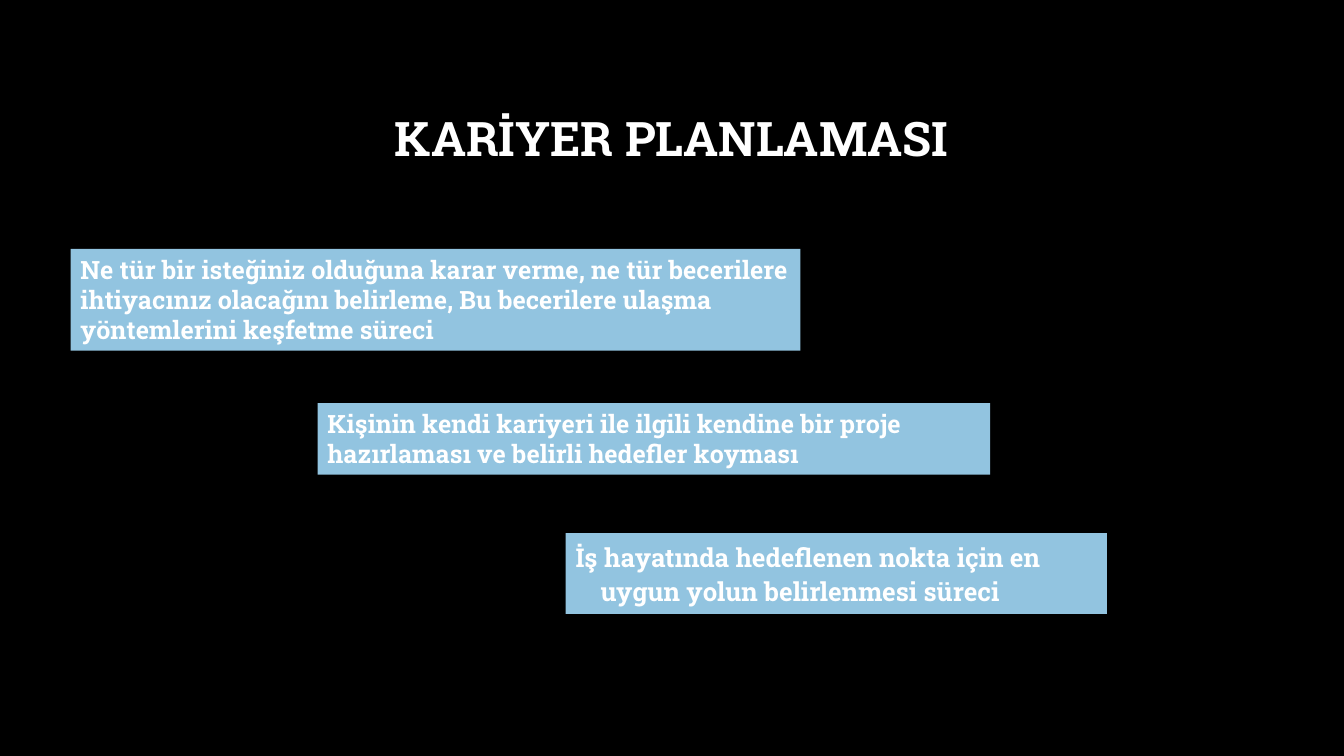
import pptx
import pptx.util
import pptx.dml.color
import pptx.enum.shapes
import pptx.enum.text

RGBColor = pptx.dml.color.RGBColor
Inches = pptx.util.Inches
ALIGN = pptx.enum.text.PP_ALIGN
ANCHOR = pptx.enum.text.MSO_ANCHOR

BLACK = RGBColor(0x00, 0x00, 0x00)
WHITE = RGBColor(0xFF, 0xFF, 0xFF)
SKY = RGBColor(0x92, 0xC4, 0xE0)
FONT = "Roboto Slab"

TITLE_BOX = (1, 0.67, 11.32, 1.45)
STEPS = [
    ((0.7, 2.47, 7.24, 1.01),
     "Ne tür bir isteğiniz olduğuna karar verme, ne tür becerilere ihtiyacınız "
     "olacağını belirleme, Bu becerilere ulaşma yöntemlerini keşfetme süreci",
     {}),
    ((3.15, 4, 6.67, 0.71),
     "Kişinin kendi kariyeri ile ilgili kendine bir proje hazırlaması ve "
     "belirli hedefler koyması",
     {}),
    ((5.61, 5.29, 5.37, 0.8),
     "İş hayatında hedeflenen nokta için en uygun yolun belirlenmesi süreci",
     {"size": 18.5, "spacing": 1.1, "hanging": 0.25}),
]


def write(sp, text, size=18, align=ALIGN.LEFT, anchor=ANCHOR.TOP, spacing=1.0, hanging=0):
    tf = sp.text_frame
    tf.word_wrap = True
    tf.vertical_anchor = anchor
    p = tf.paragraphs[0]
    p.alignment = align
    p.line_spacing = spacing
    if hanging:
        pPr = p._p.get_or_add_pPr()
        pPr.set("marL", str(Inches(hanging)))
        pPr.set("indent", str(-Inches(hanging)))
    r = p.add_run()
    r.text = text
    r.font.name = FONT
    r.font.size = pptx.util.Pt(size)
    r.font.bold = True
    r.font.color.rgb = WHITE


def add_title(s, box, text):
    sp = s.shapes.add_textbox(*map(Inches, box))
    write(sp, text, size=34, align=ALIGN.CENTER, anchor=ANCHOR.MIDDLE, spacing=0.9)


def add_step(s, box, text, **style):
    sp = s.shapes.add_shape(pptx.enum.shapes.MSO_SHAPE.RECTANGLE, *map(Inches, box))
    sp.shadow.inherit = False
    sp.fill.solid()
    sp.fill.fore_color.rgb = SKY
    sp.line.fill.background()
    write(sp, text, **style)


def main():
    prs = pptx.Presentation()
    prs.slide_width = Inches(13.33)
    prs.slide_height = Inches(7.5)
    s = prs.slides.add_slide(prs.slide_layouts[6])
    s.background.fill.solid()
    s.background.fill.fore_color.rgb = BLACK
    add_title(s, TITLE_BOX, "KARİYER PLANLAMASI")
    for box, text, style in STEPS:
        add_step(s, box, text, **style)
    prs.save("out.pptx")


if __name__ == "__main__":
    main()
